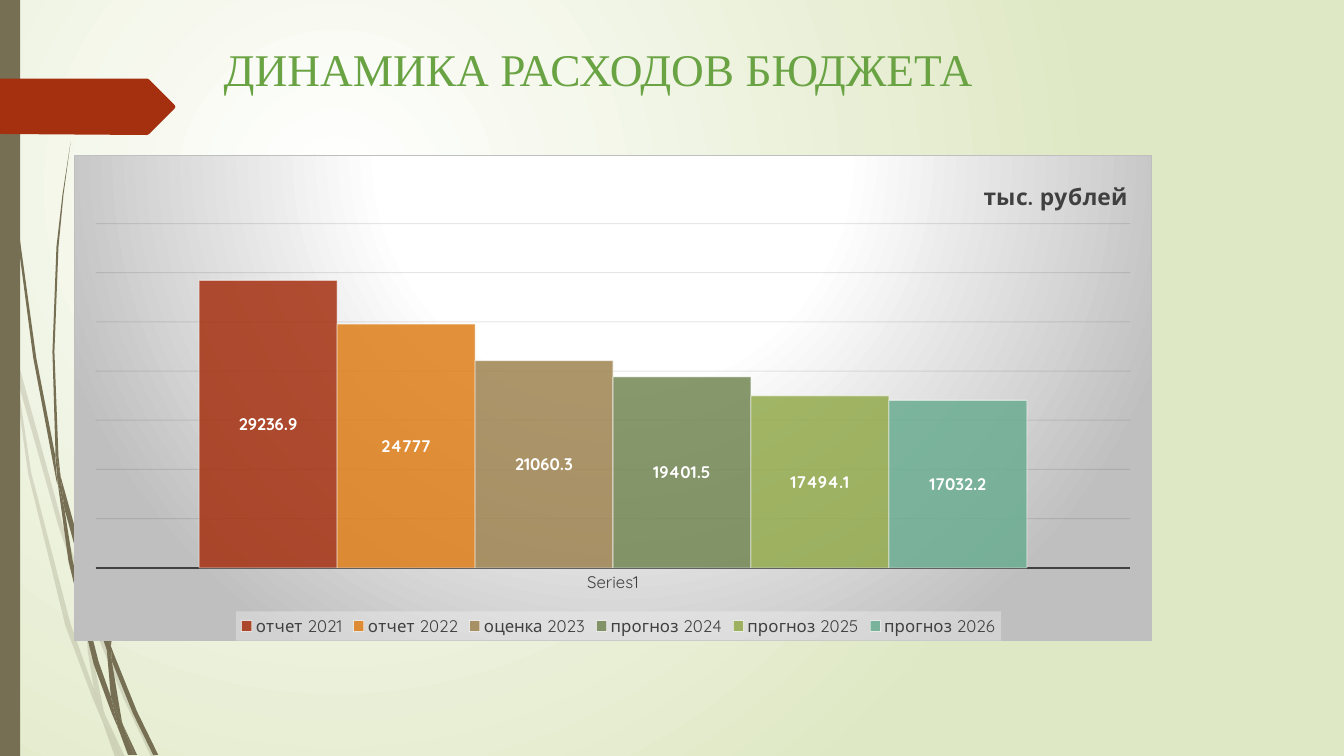
from dataclasses import dataclass

from lxml.etree import SubElement
from pptx import Presentation
from pptx.chart.data import CategoryChartData
from pptx.dml.color import RGBColor as RGB
from pptx.enum.chart import XL_CHART_TYPE as ChartType
from pptx.enum.chart import XL_LABEL_POSITION as LabelPos
from pptx.enum.chart import XL_LEGEND_POSITION as LegendPos
from pptx.enum.chart import XL_TICK_MARK as Tick
from pptx.enum.shapes import MSO_SHAPE as Shape
from pptx.enum.text import MSO_ANCHOR as Anchor
from pptx.oxml import parse_xml
from pptx.oxml.ns import nsdecls, qn
from pptx.util import Inches, Pt


@dataclass(frozen=True)
class Theme:
    stem: str = "766F54"
    ribbon: str = "A53010"
    title: str = "6AA343"
    text: str = "404040"
    grid: str = "0D0D0D"
    white: str = "FFFFFF"
    grey: str = "BFBFBF"
    legend: str = "F2F2F2"
    backdrop: str = "DFE8C4"
    title_font: str = "Times New Roman"
    chart_font: str = "Quicksand"
    title_size: float = 32.4
    unit_size: float = 16.2
    label_size: float = 12


THEME = Theme()
EXPENSES = [
    ("отчет 2021", 29236.9, "A53010"),
    ("отчет 2022", 24777, "DE7E18"),
    ("оценка 2023", 21060.3, "9F8351"),
    ("прогноз 2024", 19401.5, "728653"),
    ("прогноз 2025", 17494.1, "92AA4C"),
    ("прогноз 2026", 17032.2, "6AAC91"),
]
PALE_STEMS = [
    [(11, 350), (9, 322), (0, 282), (0, 299), (10, 344)],
    [(58, 522), (84, 599), (85, 586), (62, 520), (14, 345), (17, 376)],
    [(92, 607), (88, 596), (88, 610), (123, 694), (150, 751), (155, 751), (127, 692)],
    [(119, 751), (124, 751), (105, 711)],
    [(93, 683), (70, 619), (31, 469), (17, 376), (11, 350), (28, 470), (65, 621),
     (92, 693), (101, 714), (99, 707)],
    [(84, 599), (87, 646), (93, 683), (96, 692), (105, 711), (103, 706), (91, 646),
     (88, 610), (88, 608)],
    [(88, 584), (110, 462), (160, 349), (229, 245), (268, 198), (290, 175), (312, 154),
     (312, 153), (289, 175), (268, 197), (228, 244), (158, 348), (107, 461), (85, 584),
     (85, 586), (88, 596)],
    [(101, 714), (114, 751), (119, 751)],
    [(88, 608), (88, 610), (88, 596), (85, 586), (84, 599)],
    [(96, 692), (93, 683), (99, 707), (101, 714), (119, 751), (105, 711)],
]
DARK_STEMS = [
    [(7, 110), (17, 233), (33, 355), (56, 477), (57, 481), (55, 457), (55, 453), (36, 355),
     (19, 232), (8, 109), (5, 48), (4, 0), (3, 0), (4, 48)],
    [(88, 592), (106, 645), (106, 633), (106, 631), (93, 590), (60, 472), (64, 505)],
    [(113, 649), (110, 641), (111, 656), (132, 708), (152, 749), (157, 749), (136, 706)],
    [(110, 691), (98, 657), (72, 556), (64, 505), (57, 477), (68, 557), (93, 659),
     (111, 708), (117, 722), (116, 717)],
    [(60, 472), (58, 453), (54, 349), (58, 245), (63, 193), (70, 141), (62, 193),
     (56, 245), (52, 349), (55, 449)],
    [(133, 749), (136, 749), (122, 719)],
    [(57, 477), (64, 505), (60, 472), (55, 449), (55, 453)],
    [(111, 633), (125, 552), (158, 476), (205, 406), (231, 374), (245, 359), (261, 344),
     (260, 344), (245, 358), (231, 373), (204, 405), (156, 474), (122, 551), (106, 631),
     (110, 641)],
    [(117, 722), (127, 749), (131, 749)],
    [(106, 645), (110, 691), (116, 706), (122, 719), (121, 716), (111, 656), (109, 651)],
    [(106, 645), (109, 651), (111, 656), (110, 641), (106, 631), (106, 633)],
    [(116, 706), (110, 691), (116, 717), (117, 722), (130, 749), (133, 749), (122, 719)],
]
RIBBON = [(0, 78), (146, 78), (148, 79), (173, 104), (174, 106), (173, 108), (148, 133),
          (146, 134), (0, 133)]


def set_alpha(element, percent):
    """Make the first colour inside an element partly transparent."""
    color = next(element.iter(qn("a:srgbClr")))
    SubElement(color, qn("a:alpha"), val=str(percent * 1000))


def radial_fill(stops, left, top, right, bottom):
    """Build a circular gradient from (position, colour) stops and a focus rectangle."""
    marks = "".join(f'<a:gs pos="{pos * 1000}"><a:srgbClr val="{color}"/></a:gs>'
                    for pos, color in stops)
    return parse_xml(
        f'<a:gradFill {nsdecls("a")} rotWithShape="1"><a:gsLst>{marks}</a:gsLst>'
        f'<a:path path="circle"><a:fillToRect l="{left * 1000}" t="{top * 1000}" '
        f'r="{right * 1000}" b="{bottom * 1000}"/></a:path></a:gradFill>')


def box_format(fill, color=None):
    """Build chart box properties from a fill element and an optional border colour."""
    props = parse_xml(f'<c:spPr {nsdecls("c", "a")}/>')
    props.append(fill)
    if color:
        props.append(parse_xml(f'<a:ln {nsdecls("a")} w="9525"><a:solidFill>'
                               f'<a:srgbClr val="{color}"/></a:solidFill></a:ln>'))
    return props


def manual_layout(x, y, w=None, h=None, inner=False):
    """Build a chart layout given in fractions of the chart area."""
    target = '<c:layoutTarget val="inner"/>' if inner else ""
    modes = '<c:xMode val="edge"/><c:yMode val="edge"/>'
    sizes = "".join(f'<c:{key} val="{value}"/>'
                    for key, value in zip("xywh", (x, y, w, h)) if value is not None)
    return parse_xml(f'<c:layout {nsdecls("c")}><c:manualLayout>{target}{modes}{sizes}'
                     '</c:manualLayout></c:layout>')


def place(element, layout, after=None):
    """Replace the layout of a chart part, after the named child or at its start."""
    for old in element.findall(qn("c:layout")):
        element.remove(old)
    if after:
        element.find(qn(after)).addnext(layout)
    else:
        element.insert(0, layout)


def style_font(font, size, color, name, bold=False):
    """Set size, colour, face and weight of a font."""
    font.size, font.name, font.bold = Pt(size), name, bold
    font.color.rgb = RGB.from_string(color)


def paint(sp, color):
    """Give a shape a plain fill without line or shadow."""
    sp.shadow.inherit = False
    sp.fill.solid()
    sp.fill.fore_color.rgb = RGB.from_string(color)
    sp.line.fill.background()


def add_outline(slide, points, color, alpha=None):
    """Draw a closed outline given in hundredths of an inch."""
    builder = slide.shapes.build_freeform(*points[0], scale=Inches(0.01))
    builder.add_line_segments(points[1:], close=True)
    sp = builder.convert_to_shape()
    paint(sp, color)
    if alpha:
        set_alpha(sp._element.spPr, alpha)


def add_decor(slide):
    """Draw the backdrop, the stems, the side bar and the ribbon."""
    slide.background.fill.solid()
    solid = next(slide._element.iter(qn("a:solidFill")))
    stops = [(0, THEME.white), (100, THEME.backdrop)]
    solid.getparent().replace(solid, radial_fill(stops, 50, 50, 100, 100))
    for points in PALE_STEMS:
        add_outline(slide, points, THEME.stem, 20)
    for points in DARK_STEMS:
        add_outline(slide, points, THEME.stem)
    bar = slide.shapes.add_shape(Shape.RECTANGLE, 0, 0, Inches(0.2), Inches(7.5))
    paint(bar, THEME.stem)
    add_outline(slide, RIBBON, THEME.ribbon)


def add_title(slide, text):
    """Add the slide heading."""
    sp = slide.shapes.add_textbox(Inches(2.12), Inches(0.36), Inches(8.64), Inches(0.88))
    tf = sp.text_frame
    tf.word_wrap, tf.vertical_anchor = True, Anchor.TOP
    tf.text = text
    style_font(tf.paragraphs[0].runs[0].font, THEME.title_size, THEME.title, THEME.title_font)


def style_series(series, color):
    """Colour one column and centre its value label."""
    series.format.fill.solid()
    series.format.fill.fore_color.rgb = RGB.from_string(color)
    series.format.line.color.rgb = RGB.from_string(THEME.white)
    series.format.line.width = Pt(0.75)
    props = series._element.find(qn("c:spPr"))
    set_alpha(props.find(qn("a:solidFill")), 85)
    set_alpha(props.find(qn("a:ln")), 50)
    labels = series.data_labels
    labels.show_value, labels.position = True, LabelPos.CENTER
    style_font(labels.font, THEME.label_size, THEME.white, THEME.chart_font, True)


def style_axes(chart):
    """Keep the base line and faint gridlines, and hide the value scale."""
    base, scale = chart.category_axis, chart.value_axis
    base.major_tick_mark = base.minor_tick_mark = Tick.NONE
    base.format.line.color.rgb = RGB.from_string(THEME.text)
    base.format.line.width = Pt(1.5)
    style_font(base.tick_labels.font, THEME.label_size, THEME.text, THEME.chart_font)
    scale.visible, scale.has_major_gridlines = False, True
    scale.minimum_scale, scale.maximum_scale, scale.major_unit = 0, 35000, 5000
    grid = scale.major_gridlines.format.line
    grid.color.rgb, grid.width = RGB.from_string(THEME.grid), Pt(0.75)
    set_alpha(next(scale._element.iter(qn("c:majorGridlines"))), 10)


def add_expense_chart(slide):
    """Add the column chart of budget expenses by year."""
    data = CategoryChartData()
    data.categories = ["Series1"]
    for name, value, _ in EXPENSES:
        data.add_series(name, [value])
    chart = slide.shapes.add_chart(ChartType.COLUMN_CLUSTERED, Inches(0.73), Inches(1.54),
                                   Inches(10.7), Inches(4.82), data).chart
    style_font(chart.font, 10, "000000", THEME.chart_font)
    plot = chart.plots[0]
    plot.gap_width, plot.overlap, plot.vary_by_categories = 150, 0, False
    for series, (_, _, color) in zip(plot.series, EXPENSES):
        style_series(series, color)
    style_axes(chart)

    tf = chart.chart_title.text_frame
    tf.text = "тыс. рублей"
    style_font(tf.paragraphs[0].runs[0].font, THEME.unit_size, THEME.text,
               THEME.chart_font, True)
    place(chart.chart_title._element, manual_layout(0.84, 0.04), "c:tx")

    chart.has_legend = True
    legend = chart.legend
    legend.position, legend.include_in_layout = LegendPos.BOTTOM, False
    style_font(legend.font, THEME.label_size, THEME.text, THEME.chart_font)
    place(legend._element, manual_layout(0.15, 0.94, 0.71, 0.06), "c:legendPos")
    tint = parse_xml(f'<a:solidFill {nsdecls("a")}><a:srgbClr val="{THEME.legend}"/>'
                     '</a:solidFill>')
    set_alpha(tint, 39)
    legend._element.find(qn("c:overlay")).addnext(box_format(tint))

    root = chart._chartSpace.find(qn("c:chart"))
    place(root.find(qn("c:plotArea")), manual_layout(0.02, 0.14, 0.96, 0.71, True))
    stops = [(0, THEME.white), (39, THEME.white), (100, THEME.grey)]
    root.addnext(box_format(radial_fill(stops, 50, -80, 50, 180), THEME.grey))


def main():
    """Build the slide and save it."""
    prs = Presentation()
    prs.slide_width, prs.slide_height = Inches(13.33), Inches(7.5)
    slide = prs.slides.add_slide(prs.slide_layouts[6])
    add_decor(slide)
    add_title(slide, "ДИНАМИКА РАСХОДОВ БЮДЖЕТА")
    add_expense_chart(slide)
    prs.save("out.pptx")


if __name__ == "__main__":
    main()
